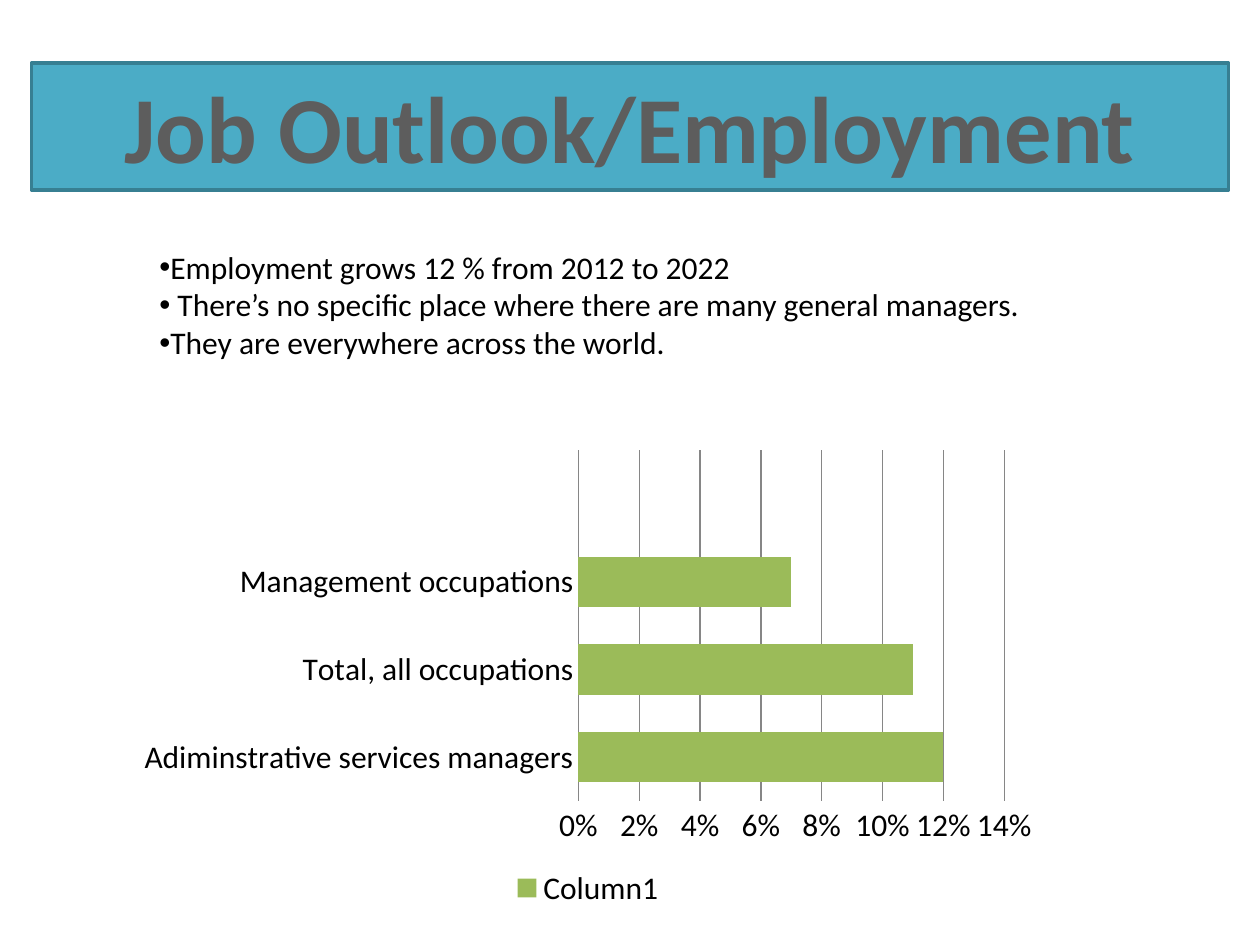
"""Build the job outlook slide with a banner, bullets and a bar chart."""
from lxml import etree
from pptx import Presentation
from pptx import util as u
from pptx.chart.data import CategoryChartData
from pptx.dml.color import RGBColor
from pptx.enum import chart as charts, shapes, text
from pptx.oxml.ns import qn

PX = 7620
FONT = "Calibri"
TEAL = RGBColor(0x4B, 0xAC, 0xC6)
DARK_TEAL = RGBColor(0x37, 0x7F, 0x92)
GREEN = RGBColor(0x9B, 0xBB, 0x59)
TITLE_GRAY = RGBColor(0x5D, 0x5D, 0x5D)
GRID_GRAY = RGBColor(0x86, 0x86, 0x86)
BLACK = RGBColor(0, 0, 0)


def px(*lengths):
    return [u.Emu(length * PX) for length in lengths]


def write(para, words, size=18, color=BLACK, bold=False, bullet=None,
          align=text.PP_ALIGN.LEFT):
    if bullet:
        properties = para._p.get_or_add_pPr()
        etree.SubElement(properties, qn("a:buFont"), typeface="Arial")
        etree.SubElement(properties, qn("a:buChar"), char=bullet)
    para.alignment = align
    span = para.add_run()
    span.text = words
    font = span.font
    font.name, font.size, font.bold = FONT, u.Pt(size), bold
    font.color.rgb = color


class SlideBuilder:
    def __init__(self, page):
        self.page = page

    def banner(self, words, *place):
        box = self.page.shapes.add_shape(shapes.MSO_SHAPE.RECTANGLE, *px(*place))
        box.shadow.inherit = False
        box.fill.solid()
        box.fill.fore_color.rgb = TEAL
        box.line.color.rgb = DARK_TEAL
        box.line.width = u.Pt(2)
        frame = box.text_frame
        frame.word_wrap = True
        frame.vertical_anchor = text.MSO_ANCHOR.TOP
        write(frame.paragraphs[0], words, size=54, color=TITLE_GRAY, bold=True,
              align=text.PP_ALIGN.CENTER)

    def bullets(self, lines, *place):
        frame = self.page.shapes.add_textbox(*px(*place)).text_frame
        frame.word_wrap = True
        for index, line in enumerate(lines):
            para = frame.add_paragraph() if index else frame.paragraphs[0]
            write(para, line, bullet="•")

    def bar_chart(self, name, rows, *place):
        data = CategoryChartData(number_format="0%")
        data.categories = [label for label, _ in rows]
        data.add_series(name, [value for _, value in rows])
        chart = self.page.shapes.add_chart(
            charts.XL_CHART_TYPE.BAR_CLUSTERED, *px(*place), data).chart
        chart.font.name, chart.font.size = FONT, u.Pt(18)
        chart.font.color.rgb = BLACK
        chart.has_title = False
        chart.has_legend = True
        chart.legend.position = charts.XL_LEGEND_POSITION.BOTTOM
        chart.legend.include_in_layout = False
        plot = chart.plots[0]
        plot.gap_width, plot.overlap = 75, -25
        plot.vary_by_categories = False
        bars = plot.series[0].format.fill
        bars.solid()
        bars.fore_color.rgb = GREEN
        for axis in (chart.category_axis, chart.value_axis):
            axis.major_tick_mark = axis.minor_tick_mark = charts.XL_TICK_MARK.NONE
        chart.category_axis.format.line.color.rgb = GRID_GRAY
        values = chart.value_axis
        values.format.line.fill.background()
        values.has_major_gridlines = True
        values.major_gridlines.format.line.color.rgb = GRID_GRAY
        values.tick_labels.number_format = "0%"
        values.tick_labels.number_format_is_linked = False


def main():
    deck = Presentation()
    deck.slide_width, deck.slide_height = px(1200, 900)
    slide = SlideBuilder(deck.slides.add_slide(deck.slide_layouts[6]))
    slide.banner("Job Outlook/Employment", 30, 60, 1140, 121)
    slide.bar_chart("Column1", [
        ("Adiminstrative services managers", 0.12),
        ("Total, all occupations", 0.11),
        ("Management occupations", 0.07),
        ("", None),
    ], 120, 420, 880, 450)
    slide.bullets([
        "Employment grows 12 % from 2012 to 2022",
        " There’s no specific place where there are many general managers.",
        "They are everywhere across the world.",
    ], 140, 230, 940, 121)
    deck.save("out.pptx")


if __name__ == "__main__":
    main()
